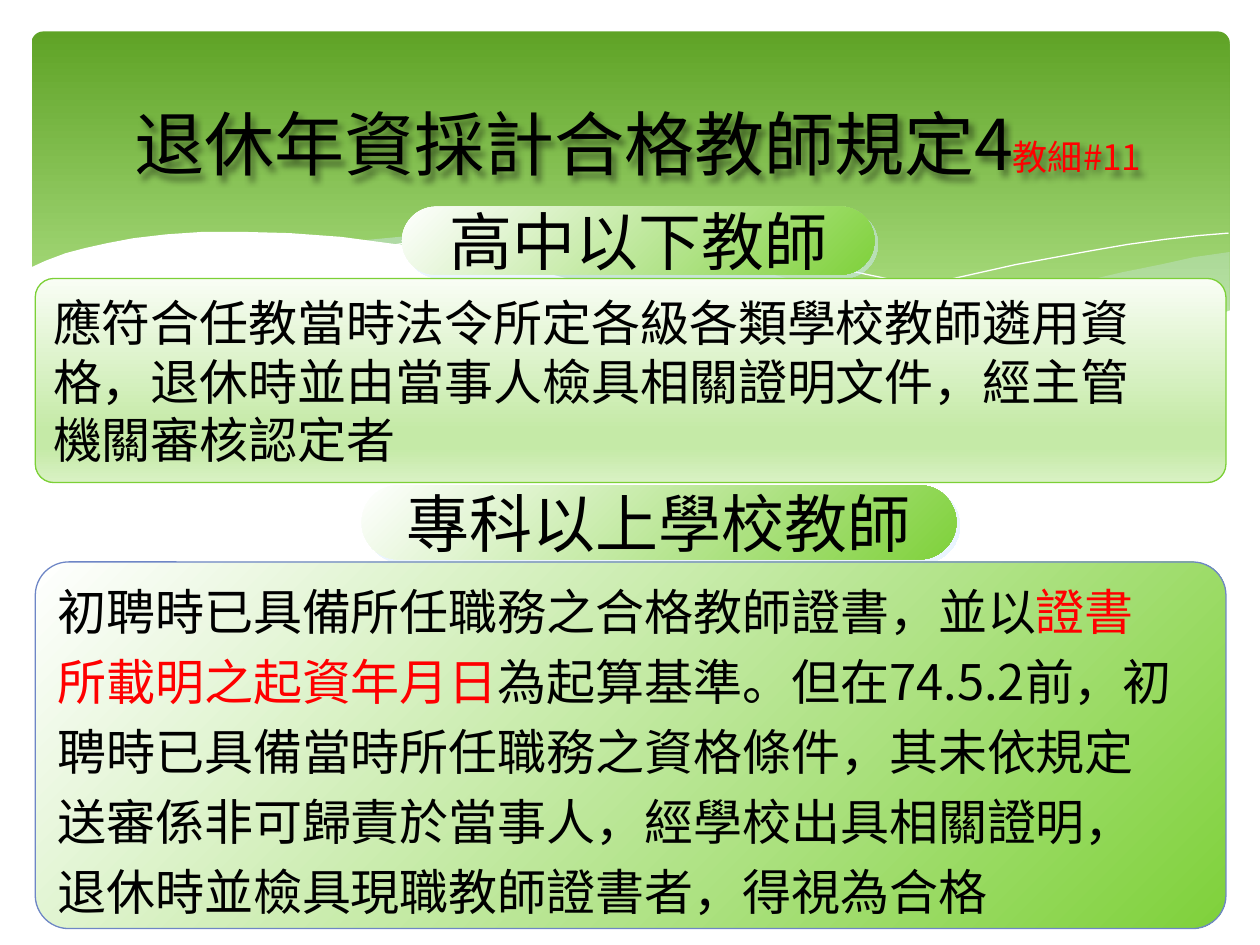
from dataclasses import dataclass
from typing import Optional

from lxml.etree import SubElement
from pptx import Presentation
from pptx.dml.color import RGBColor
from pptx.enum.shapes import MSO_SHAPE
from pptx.enum.text import MSO_ANCHOR, PP_ALIGN
from pptx.oxml.ns import qn
from pptx.util import Inches, Pt

FONT = "Noto Sans CJK SC"
BLACK, RED, WHITE = "000000", "FF0000", "FFFFFF"
PALE_BLUE = "D6ECFF"
DIAGONAL = [(0, WHITE), (100, "7FD13B")]
LEFT, WIDTH = 0.28, 9.45


@dataclass
class Panel:
    box: tuple
    corner: float
    stops: list
    angle: int
    paragraphs: tuple = ()  # each paragraph is a list of (text, colour)
    size: int = 28
    align: PP_ALIGN = PP_ALIGN.LEFT
    spacing: Optional[int] = None
    line: Optional[str] = None
    shadow: bool = False


@dataclass
class Wave:
    points: list
    fill: Optional[str] = None
    opacity: int = 100


WAVES = [
    Wave([(9.76, 2), (9.48, 2.04), (9.21, 2.1), (8.91, 2.16), (8.61, 2.23), (8.05, 2.37),
          (7.53, 2.48), (7.06, 2.57), (6.61, 2.65), (6.91, 2.69), (7.19, 2.72), (7.45, 2.75),
          (7.81, 2.77), (8.14, 2.78), (8.44, 2.77), (8.72, 2.74), (8.97, 2.7), (9.21, 2.65),
          (9.42, 2.59), (9.63, 2.52), (9.76, 2.47)], PALE_BLUE, 29),
    Wave([(8.93, 2.73), (8.66, 2.69), (8.07, 2.6), (7.41, 2.47), (6.68, 2.31), (6.29, 2.22),
          (5.98, 2.14), (5.69, 2.08), (5.41, 2.03), (5.14, 1.98), (4.89, 1.94), (4.42, 1.89),
          (3.99, 1.86), (3.61, 1.85), (3.28, 1.87), (2.86, 1.91), (3.23, 1.96), (3.62, 2.03),
          (4.04, 2.11), (4.49, 2.22), (4.91, 2.32), (5.3, 2.4), (5.66, 2.48), (6.01, 2.55),
          (6.34, 2.61), (6.65, 2.66), (6.95, 2.7), (7.22, 2.74), (7.48, 2.76), (7.85, 2.78),
          (8.28, 2.78), (8.57, 2.77), (8.76, 2.75)], PALE_BLUE, 40),
    Wave([(3.09, 1.95), (3.28, 1.92), (3.53, 1.89), (3.87, 1.87), (4.33, 1.87), (4.69, 1.89),
          (5.1, 1.92), (5.56, 1.97), (6.08, 2.04), (6.65, 2.13), (7.27, 2.26), (7.95, 2.41),
          (8.69, 2.61), (9.07, 2.72)]),
    Wave([(6.13, 2.57), (6.53, 2.46), (6.95, 2.35), (7.48, 2.23), (8.06, 2.1), (8.66, 1.99),
          (8.95, 1.94), (9.24, 1.9), (9.51, 1.87), (9.75, 1.85)]),
    Wave([(9.77, 2.46), (9.59, 2.53), (9.4, 2.59), (9.2, 2.65), (8.99, 2.69), (8.75, 2.73),
          (8.5, 2.75), (8.09, 2.77), (7.78, 2.76), (7.44, 2.74), (7.08, 2.7), (6.68, 2.65),
          (6.26, 2.58), (5.79, 2.5), (5.29, 2.39), (4.75, 2.27), (4.18, 2.13), (3.65, 2.02),
          (3.16, 1.94), (2.71, 1.88), (2.3, 1.85), (1.93, 1.84), (1.61, 1.84), (1.32, 1.86),
          (1.06, 1.89), (0.85, 1.93), (0.67, 1.97), (0.52, 2.01), (0.36, 2.07), (0.23, 2.13),
          (0.23, 3.29), (9.77, 3.29)], WHITE),
]

BACKDROP = Panel((0.25, 0.25, 9.51, 2.7), 0.034, [(0, "5FA326"), (90, "B2E389")], 90)


def heading(text: str, left: float, top: float, width: float, height: float) -> Panel:
    return Panel((left, top, width, height), 0.5, DIAGONAL, 45, ([(text, BLACK)],),
                 size=36, align=PP_ALIGN.CENTER, shadow=True)


PANELS = [
    heading("高中以下教師", 3.19, 1.64, 3.75, 0.54),
    Panel((LEFT, 2.21, WIDTH, 1.62), 0.091,
          [(0, "F9FDF5"), (74, "C5EAA7"), (83, "C5EAA7"), (100, "D9F1C4")], 90,
          ([("應符合任教當時法令所定各級各類學校教師遴用資", BLACK)],
           [("格，退休時並由當事人檢具相關證明文件，經主管", BLACK)],
           [("機關審核認定者", BLACK)]), line="7CD036"),
    heading("專科以上學校教師", 2.87, 3.85, 4.72, 0.59),
    Panel((LEFT, 4.46, WIDTH, 2.91), 0.091, DIAGONAL, 45,
          ([("初聘時已具備所任職務之合格教師證書，並以", BLACK), ("證書", RED)],
           [("所載明之起資年月日", RED), ("為起算基準。但在74.5.2前，初", BLACK)],
           [("聘時已具備當時所任職務之資格條件，其未依規定", BLACK)],
           [("送審係非可歸責於當事人，經學校出具相關證明，", BLACK)],
           [("退休時並檢具現職教師證書者，得視為合格", BLACK)]),
          align=PP_ALIGN.JUSTIFY, spacing=40, line="6E86C6"),
]


def rgb(value: str) -> RGBColor:
    return RGBColor.from_string(value)


def add_color(parent, value: str, opacity: int = 100) -> None:
    color = SubElement(parent, qn("a:srgbClr"), val=value)
    if opacity < 100:
        SubElement(color, qn("a:alpha"), val=str(opacity * 1000))


def set_gradient(sp, stops: list, angle: int) -> None:
    """Fill with any number of stops; the angle runs clockwise in degrees."""
    sp.fill.gradient()
    grad = sp._element.spPr.find(qn("a:gradFill"))
    for child in list(grad):
        grad.remove(child)
    stop_list = SubElement(grad, qn("a:gsLst"))
    for position, color in stops:
        add_color(SubElement(stop_list, qn("a:gs"), pos=str(position * 1000)), color)
    SubElement(grad, qn("a:lin"), ang=str(angle * 60000), scaled="0")


def add_shadow(sp, color: str, opacity: int, blur: float, distance: float, angle: int) -> None:
    sp.shadow.inherit = False
    effects = sp._element.spPr.find(qn("a:effectLst"))
    shadow = SubElement(effects, qn("a:outerShdw"), blurRad=str(Pt(blur)), dist=str(Pt(distance)),
                        dir=str(angle * 60000), algn="ctr", rotWithShape="0")
    add_color(shadow, color, opacity)


def set_paragraph_font(p, size: int) -> None:
    p.font.size = Pt(size)
    p.font.name = FONT
    SubElement(p._p.pPr.find(qn("a:defRPr")), qn("a:ea"), typeface=FONT)


def add_run(p, text: str, color: str):
    r = p.add_run()
    r.text = text
    r.font.color.rgb = rgb(color)
    return r


def draw_wave(slide, wave: Wave) -> None:
    points = [(Inches(x), Inches(y)) for x, y in wave.points]
    builder = slide.shapes.build_freeform(*points[0])
    builder.add_line_segments(points[1:], close=wave.fill is not None)
    sp = builder.convert_to_shape()
    sp.shadow.inherit = False
    if wave.fill:
        sp.fill.solid()
        sp.fill.fore_color.rgb = rgb(wave.fill)
        if wave.opacity < 100:
            color = sp._element.spPr.find(qn("a:solidFill")).find(qn("a:srgbClr"))
            SubElement(color, qn("a:alpha"), val=str(wave.opacity * 1000))
        sp.line.fill.background()
    else:
        sp.fill.background()
        sp.line.color.rgb = rgb(WHITE)
        sp.line.width = Pt(0)


def draw_panel(slide, panel: Panel) -> None:
    sp = slide.shapes.add_shape(MSO_SHAPE.ROUNDED_RECTANGLE, *map(Inches, panel.box))
    sp.adjustments[0] = panel.corner
    set_gradient(sp, panel.stops, panel.angle)
    if panel.line:
        sp.line.color.rgb = rgb(panel.line)
        sp.line.width = Pt(0.75)
    else:
        sp.line.fill.background()
    if panel.shadow:
        add_shadow(sp, PALE_BLUE, 50, 0, 2.8, 45)
    else:
        sp.shadow.inherit = False
    tf = sp.text_frame
    tf.vertical_anchor = MSO_ANCHOR.MIDDLE
    for i, runs in enumerate(panel.paragraphs):
        p = tf.add_paragraph() if i else tf.paragraphs[0]
        p.alignment = panel.align
        if panel.spacing:
            p.line_spacing = Pt(panel.spacing)
        set_paragraph_font(p, panel.size)
        for text, color in runs:
            add_run(p, text, color)


def draw_title(slide) -> None:
    sp = slide.shapes.add_textbox(Inches(0.61), Inches(0.73), Inches(8.91), Inches(0.8))
    add_shadow(sp, BLACK, 45, 4, 3, 60)
    tf = sp.text_frame
    tf.word_wrap = True
    tf.vertical_anchor = MSO_ANCHOR.MIDDLE
    p = tf.paragraphs[0]
    p.alignment = PP_ALIGN.CENTER
    set_paragraph_font(p, 40)
    add_run(p, "退休年資採計合格教師規定4", BLACK)
    add_run(p, "教細#11", RED).font.size = Pt(20)


def main() -> None:
    prs = Presentation()
    prs.slide_width, prs.slide_height = Inches(10), Inches(7.5)
    slide = prs.slides.add_slide(prs.slide_layouts[6])
    draw_panel(slide, BACKDROP)
    for wave in WAVES:
        draw_wave(slide, wave)
    draw_title(slide)
    for panel in PANELS:
        draw_panel(slide, panel)
    prs.save("out.pptx")


if __name__ == "__main__":
    main()
